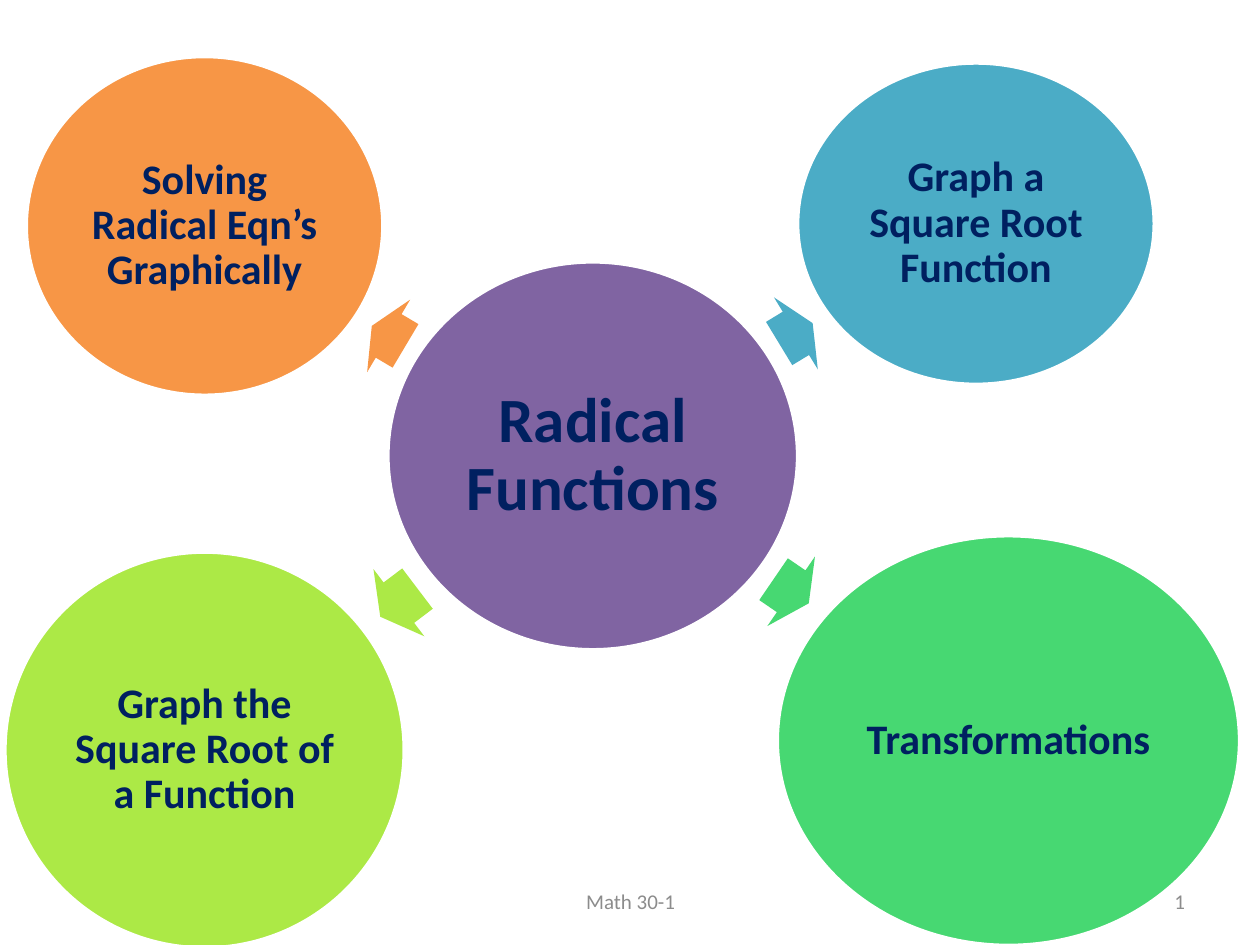
from dataclasses import dataclass

from pptx import Presentation
from pptx import util as u
from pptx.dml.color import RGBColor
from pptx.enum import shapes, text


@dataclass(frozen=True)
class Theme:
    font: str = "Calibri"
    ink: str = "002060"
    muted: str = "8C8C8C"
    outline: str = "FFFFFF"
    hub: str = "8064A2"
    hub_size: int = 36
    topic_size: int = 24
    footer_size: int = 12


THEME = Theme()

# Label, colour, circle box, arrow box, arrow rotation (boxes in cm)
TOPICS = [
    ("Graph a Square Root Function", "4BACC6",
     (16.08, 1.27, 7.19, 6.48), (15.65, 5.87, 0.79, 1.7), 328.7),
    ("Transformations", "47D872",
     (15.67, 10.8, 9.32, 8.26), (15.52, 11.07, 0.86, 1.7), 34.4),
    ("Graph the Square Root of a Function", "ACE946",
     (0.1, 11.13, 8.05, 7.98), (7.57, 11.3, 0.94, 1.7), 142.9),
    ("Solving Radical Eqn’s Graphically", "F79646",
     (0.53, 1.14, 7.19, 6.83), (7.44, 5.92, 0.79, 1.7), 210.7),
]


def to_lengths(box):
    return [u.Cm(value) for value in box]


def write(shape, words, size, color, bold=False, align=text.PP_ALIGN.CENTER):
    """Put one vertically centred paragraph into a shape."""
    frame = shape.text_frame
    frame.text = words
    frame.word_wrap = True
    frame.vertical_anchor = text.MSO_ANCHOR.MIDDLE
    paragraph = frame.paragraphs[0]
    paragraph.alignment = align
    font = paragraph.runs[0].font
    font.name, font.size, font.bold = THEME.font, u.Pt(size), bold
    font.color.rgb = RGBColor.from_string(color)
    return frame


def add_filled(slide, kind, box, color):
    shape = slide.shapes.add_shape(kind, *to_lengths(box))
    shape.shadow.inherit = False
    shape.fill.solid()
    shape.fill.fore_color.rgb = RGBColor.from_string(color)
    shape.line.fill.background()
    return shape


def add_circle(slide, box, words, color, size, inset):
    circle = add_filled(slide, shapes.MSO_SHAPE.OVAL, box, color)
    circle.line.color.rgb = RGBColor.from_string(THEME.outline)
    circle.line.width = u.Pt(2)
    frame = write(circle, words, size, THEME.ink, bold=True)
    frame.paragraphs[0].line_spacing = 0.9
    frame.margin_left = frame.margin_right = u.Cm(inset)
    frame.margin_top = frame.margin_bottom = u.Cm(inset)


def add_arrow(slide, box, color, rotation):
    arrow = add_filled(slide, shapes.MSO_SHAPE.RIGHT_ARROW, box, color)
    arrow.adjustments[0] = 0.6
    arrow.adjustments[1] = 0.5
    arrow.rotation = rotation


def add_radial_diagram(slide):
    # Hub in the middle
    add_circle(slide, (7.82, 5.28, 8.26, 7.82), "Radical Functions",
               THEME.hub, THEME.hub_size, 0.13)
    # Topics around it, each with its arrow
    for words, color, circle_box, arrow_box, rotation in TOPICS:
        add_arrow(slide, arrow_box, color, rotation)
        add_circle(slide, circle_box, words, color, THEME.topic_size, 0.08)


def add_footer(slide, top, height):
    for left, width, words, align in (
        (8.69, 8.05, "Math 30-1", text.PP_ALIGN.CENTER),
        (18.21, 5.93, "1", text.PP_ALIGN.RIGHT),
    ):
        box = slide.shapes.add_textbox(*to_lengths((left, top, width, height)))
        write(box, words, THEME.footer_size, THEME.muted, align=align)


def main():
    presentation = Presentation()
    presentation.slide_width = u.Cm(25.4)
    presentation.slide_height = u.Cm(19.05)
    slide = presentation.slides.add_slide(presentation.slide_layouts[6])
    add_radial_diagram(slide)
    add_footer(slide, top=17.65, height=1.02)
    presentation.save("out.pptx")


if __name__ == "__main__":
    main()
